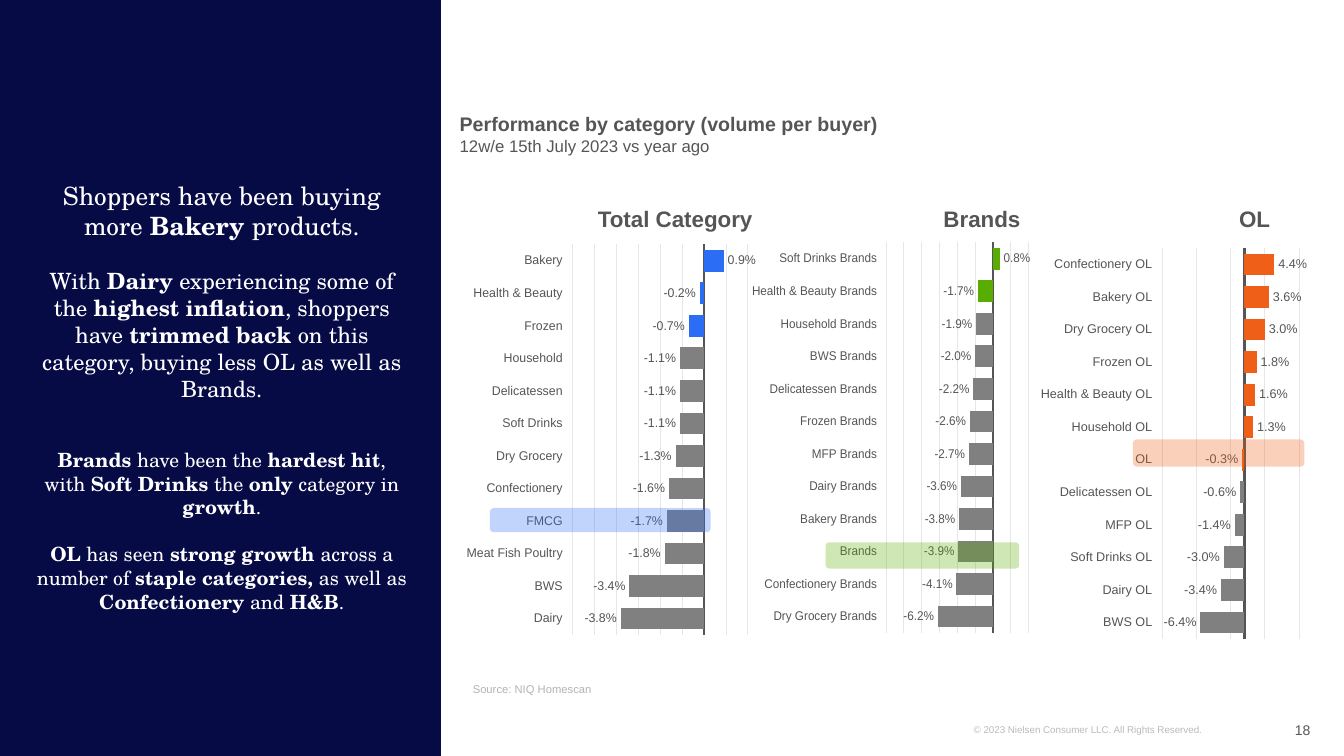
from dataclasses import dataclass

from lxml import etree
from pptx import Presentation
from pptx.chart.data import CategoryChartData
from pptx.dml.color import RGBColor
from pptx.enum.chart import XL_CHART_TYPE, XL_LABEL_POSITION, XL_TICK_LABEL_POSITION, XL_TICK_MARK
from pptx.enum.shapes import MSO_SHAPE
from pptx.enum.text import MSO_ANCHOR, MSO_AUTO_SIZE, PP_ALIGN
from pptx.oxml.ns import qn
from pptx.util import Inches, Pt

BAR_CLUSTERED = XL_CHART_TYPE.BAR_CLUSTERED
OUTSIDE_END = XL_LABEL_POSITION.OUTSIDE_END
LABELS_LOW = XL_TICK_LABEL_POSITION.LOW
NO_TICK = XL_TICK_MARK.NONE
RECTANGLE, ROUNDED = MSO_SHAPE.RECTANGLE, MSO_SHAPE.ROUNDED_RECTANGLE
TOP, MIDDLE, BOTTOM = MSO_ANCHOR.TOP, MSO_ANCHOR.MIDDLE, MSO_ANCHOR.BOTTOM
LEFT, CENTER, RIGHT = PP_ALIGN.LEFT, PP_ALIGN.CENTER, PP_ALIGN.RIGHT
NO_AUTOSIZE = MSO_AUTO_SIZE.NONE

NAVY = RGBColor(0x06, 0x0A, 0x45)
WHITE = RGBColor(0xFF, 0xFF, 0xFF)
INK = RGBColor(0x55, 0x55, 0x55)
SOURCE_GRAY = RGBColor(0xB3, 0xB3, 0xB3)
LEGAL_GRAY = RGBColor(0xBB, 0xBB, 0xBB)
GRID_GRAY = RGBColor(0xE6, 0xE6, 0xE6)
BAR_GRAY = RGBColor(0x80, 0x80, 0x80)
BLUE = RGBColor(0x2C, 0x6D, 0xF6)
GREEN = RGBColor(0x59, 0xAD, 0x00)
ORANGE = RGBColor(0xEF, 0x5F, 0x17)

SANS, SERIF = "Arial", "TeX Gyre Schola"
PERCENT = "0.0%"


@dataclass
class Line:
    """A paragraph whose bold parts stand between double asterisks."""
    text: str
    size: float
    before: float = 0
    after: float = 0


class SlideBuilder:
    """Draws styled elements placed in percent of the slide's width and height."""

    def __init__(self, deck):
        self.deck = deck
        self.page = deck.slides.add_slide(deck.slide_layouts[5])

    def place(self, left, top, width, height):
        across, down = self.deck.slide_width / 100, self.deck.slide_height / 100
        return int(left * across), int(top * down), int(width * across), int(height * down)

    def set_lines(self, box, lines, color, font=SANS, align=LEFT, anchor=TOP, wrap=True, side=0):
        frame = box.text_frame
        frame.text = "\n".join(line.text.replace("**", "") for line in lines)
        frame.auto_size, frame.word_wrap, frame.vertical_anchor = NO_AUTOSIZE, wrap, anchor
        frame.margin_left = frame.margin_right = Inches(side)
        frame.margin_top = frame.margin_bottom = Inches(0.05)
        for para, line in zip(frame.paragraphs, lines):
            para.alignment = align
            para.space_before, para.space_after = Pt(line.before), Pt(line.after)
            para.text = ""
            for index, part in enumerate(line.text.split("**")):
                if part:
                    span = para.add_run()
                    span.text = part
                    span.font.name, span.font.size = font, Pt(line.size)
                    span.font.bold = index % 2 == 1
                    span.font.color.rgb = color

    def title(self, area, lines):
        box = self.page.shapes.title
        box.left, box.top, box.width, box.height = self.place(*area)
        self.set_lines(box, lines, INK)

    def text(self, area, lines, color, **style):
        self.set_lines(self.page.shapes.add_textbox(*self.place(*area)), lines, color, **style)

    def block(self, area, color, kind=RECTANGLE, opacity=100):
        shape = self.page.shapes.add_shape(kind, *self.place(*area))
        shape.shadow.inherit = False
        shape.fill.solid()
        shape.fill.fore_color.rgb = color
        shape.line.fill.background()
        if opacity < 100:
            tint = shape.element.spPr.find(f"{qn('a:solidFill')}/{qn('a:srgbClr')}")
            etree.SubElement(tint, qn("a:alpha"), val=str(opacity * 1000))
        return shape

    def band(self, area, color, corner):
        self.block(area, color, ROUNDED, 29).adjustments[0] = corner

    def chart(self, area, rows, scale, plot_box, color, highlighted):
        data = CategoryChartData(number_format=PERCENT)
        data.categories = [name for name, _ in rows]
        data.add_series("Series 1", [round(percent / 100, 3) for _, percent in rows])
        chart = self.page.shapes.add_chart(BAR_CLUSTERED, *self.place(*area), data).chart
        chart.has_title = chart.has_legend = False
        self.font(chart.font, 14)

        names, values = chart.category_axis, chart.value_axis
        names.reverse_order = True
        names.tick_label_position = LABELS_LOW
        names.major_tick_mark = names.minor_tick_mark = NO_TICK
        names.format.line.color.rgb, names.format.line.width = INK, Pt(2)
        self.font(names.tick_labels.font, 9)
        values.visible = False
        values.minimum_scale, values.maximum_scale = scale
        values.has_major_gridlines = True
        grid = values.major_gridlines.format.line
        grid.color.rgb, grid.width = GRID_GRAY, Pt(0.75)

        plot = chart.plots[0]
        plot.gap_width, plot.vary_by_categories = 50, False
        plot.has_data_labels = True
        labels = plot.data_labels
        labels.show_value, labels.position = True, OUTSIDE_END
        labels.number_format, labels.number_format_is_linked = PERCENT, False
        self.font(labels.font, 9)
        series = plot.series[0]
        series.invert_if_negative = False
        series.format.fill.solid()
        series.format.fill.fore_color.rgb = BAR_GRAY
        for index in range(highlighted):
            fill = series.points[index].format.fill
            fill.solid()
            fill.fore_color.rgb = color
        self.fix_plot(chart, plot_box)

    def font(self, font, size):
        font.name, font.size, font.color.rgb = SANS, Pt(size), INK

    def fix_plot(self, chart, plot_box):
        plot_area = chart.element.find(f".//{qn('c:plotArea')}")
        for old in plot_area.findall(qn("c:layout")):
            plot_area.remove(old)
        layout = etree.Element(qn("c:layout"))
        plot_area.insert(0, layout)
        manual = etree.SubElement(layout, qn("c:manualLayout"))
        settings = [("layoutTarget", "inner"), ("xMode", "edge"), ("yMode", "edge")]
        settings += zip("xywh", (share / 100 for share in plot_box))
        for tag, value in settings:
            etree.SubElement(manual, qn(f"c:{tag}"), val=str(value))


TOTAL = [("Bakery", 0.9), ("Health & Beauty", -0.2), ("Frozen", -0.7), ("Household", -1.1),
         ("Delicatessen", -1.1), ("Soft Drinks", -1.1), ("Dry Grocery", -1.3),
         ("Confectionery", -1.6), ("FMCG", -1.7), ("Meat Fish Poultry", -1.8),
         ("BWS", -3.4), ("Dairy", -3.8)]
BRANDS = [("Soft Drinks Brands", 0.8), ("Health & Beauty Brands", -1.7),
          ("Household Brands", -1.9), ("BWS Brands", -2.0), ("Delicatessen Brands", -2.2),
          ("Frozen Brands", -2.6), ("MFP Brands", -2.7), ("Dairy Brands", -3.6),
          ("Bakery Brands", -3.8), ("Brands", -3.9), ("Confectionery Brands", -4.1),
          ("Dry Grocery Brands", -6.2)]
OWN_LABEL = [("Confectionery OL", 4.4), ("Bakery OL", 3.6), ("Dry Grocery OL", 3.0),
             ("Frozen OL", 1.8), ("Health & Beauty OL", 1.6), ("Household OL", 1.3),
             ("OL", -0.3), ("Delicatessen OL", -0.6), ("MFP OL", -1.4),
             ("Soft Drinks OL", -3.0), ("Dairy OL", -3.4), ("BWS OL", -6.4)]
STORY = [
    Line("Shoppers have been buying more **Bakery **products.", 18),
    Line("With **Dairy** experiencing some of the **highest inflation**, shoppers have "
         "**trimmed back **on this category, buying less OL as well as Brands.", 16, 19),
    Line("**Brands** have been the **hardest hit**, with **Soft Drinks** the **only** "
         "category in **growth**.", 14, 33),
    Line("**OL** has seen **strong growth **across a number of **staple categories, **"
         "as well as **Confectionery** and **H&B**.", 14, 17)]


def main():
    deck = Presentation()
    deck.slide_width, deck.slide_height = Inches(13.33), Inches(7.5)
    slide = SlideBuilder(deck)
    slide.block((0, 0, 32.81, 100), NAVY)
    slide.title((34.2, 14.2, 48.38, 10.27),
                [Line("**Performance by category (volume per buyer)**", 14),
                 Line("12w/e 15th July 2023 vs year ago", 12)])
    slide.text((1.88, 19.47, 29.25, 66), STORY, WHITE,
               font=SERIF, align=CENTER, anchor=MIDDLE, side=0.1)

    slide.chart((32.85, 30.53, 23.4, 56.93), TOTAL, (-0.06, None),
                (42.5, 3.2, 57, 90.7), BLUE, 3)
    slide.chart((55.95, 30.27, 21.23, 56.93), BRANDS, (-0.12, 0.05),
                (43, 3.2, 57, 90.7), GREEN, 2)
    slide.chart((77.25, 31.6, 21.45, 56.93), OWN_LABEL, (-0.12, 0.12),
                (43, 2.2, 57, 90.7), ORANGE, 7)
    slide.band((36.45, 67.2, 16.43, 3.2), BLUE, 0.17)
    slide.band((61.43, 71.73, 14.4, 3.47), GREEN, 0.14)
    slide.band((84.3, 58.13, 12.75, 3.6), ORANGE, 0.14)
    for heading, left, align in (("Total Category", 44.48, LEFT), ("Brands", 70.2, LEFT),
                                 ("OL", 87.38, CENTER)):
        slide.text((left, 26.5, 11.93, 4.4), [Line(f"**{heading}**", 16, after=6)], INK,
                   align=align, wrap=False)

    slide.text((35.18, 87.33, 62.33, 5.33), [Line("Source: NIQ Homescan", 8)],
               SOURCE_GRAY, anchor=BOTTOM)
    slide.text((72.45, 95.07, 21.3, 2.93),
               [Line("© 2023 Nielsen Consumer LLC. All Rights Reserved.", 7)], LEGAL_GRAY)
    slide.text((90.08, 93.87, 7.43, 5.33), [Line("18", 10)], INK, align=RIGHT, anchor=MIDDLE)
    deck.save("out.pptx")


if __name__ == "__main__":
    main()
